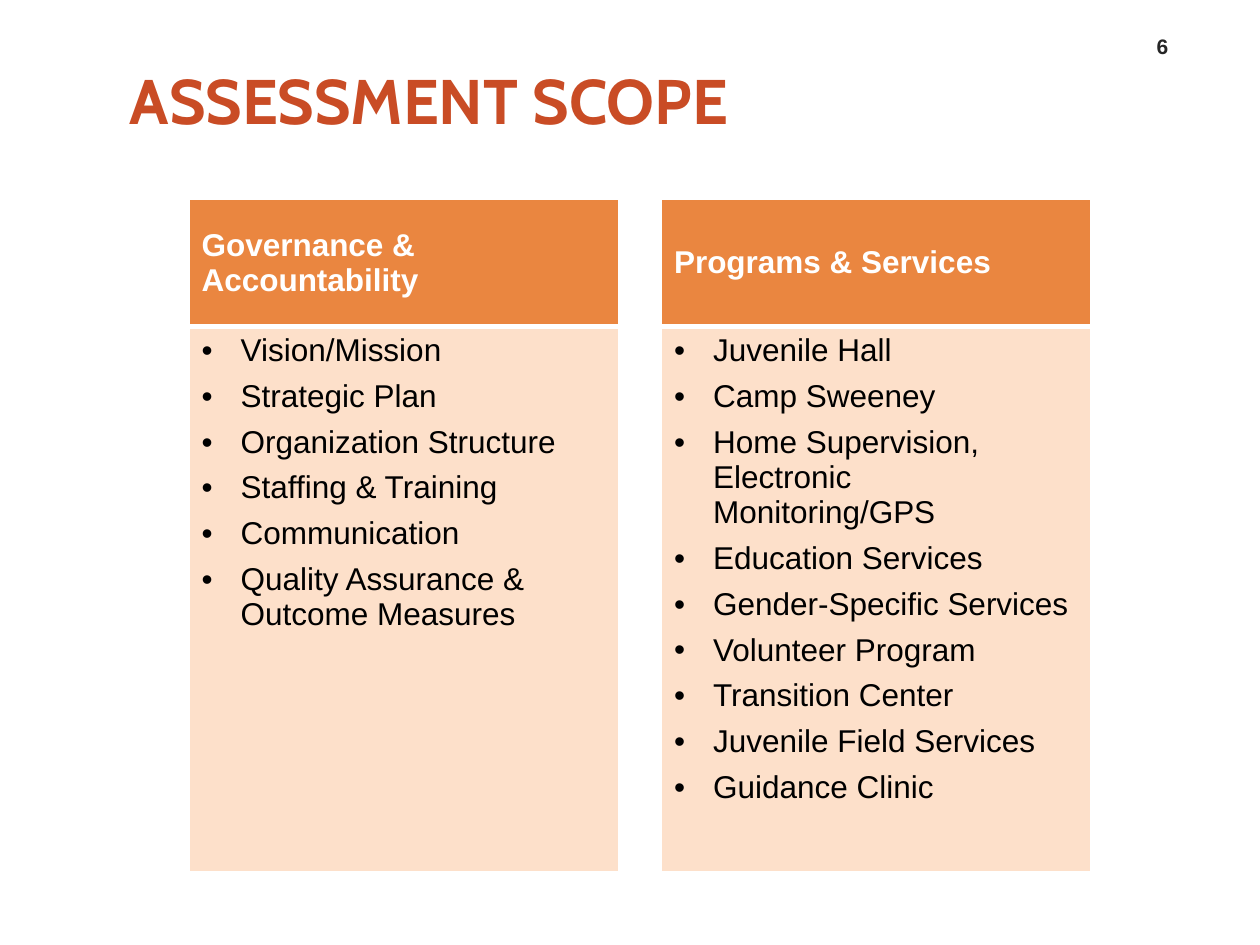
from lxml.etree import SubElement
from pptx import Presentation
from pptx.dml.color import RGBColor
from pptx.enum.text import MSO_ANCHOR as Anchor, PP_ALIGN as Align
from pptx.oxml.ns import qn
from pptx.util import Inches, Pt

WIDTH, HEIGHT = 10, 7.5
COLORS = {
    "title": "C94C25",
    "number": "262626",
    "header": "EA8640",
    "body": "FDE0CA",
    "white": "FFFFFF",
    "black": "000000",
}
SCOPE = {
    "Governance & Accountability": [
        "Vision/Mission",
        "Strategic Plan",
        "Organization Structure",
        "Staffing & Training",
        "Communication",
        "Quality Assurance & Outcome Measures",
    ],
    "Programs & Services": [
        "Juvenile Hall",
        "Camp Sweeney",
        "Home Supervision, Electronic Monitoring/GPS",
        "Education Services",
        "Gender-Specific Services",
        "Volunteer Program",
        "Transition Center",
        "Juvenile Field Services",
        "Guidance Clinic",
    ],
}
COLUMN, GUTTER = 3.41, 0.34
HEADER_ROW, BODY_ROW = 1.01, 4.33
BULLET_INDENT = 0.31


def add_run(paragraph, text, size, color, bold=False, font="Arial"):
    run = paragraph.add_run()
    run.text = text
    run.font.name = font
    run.font.size = Pt(size)
    run.font.bold = bold
    run.font.color.rgb = RGBColor.from_string(COLORS[color])


def add_label(slide, left, top, width, height, anchor):
    label = slide.shapes.add_textbox(
        Inches(WIDTH * left), Inches(HEIGHT * top),
        Inches(WIDTH * width), Inches(HEIGHT * height))
    frame = label.text_frame
    frame.word_wrap = True
    frame.vertical_anchor = anchor
    return frame


def add_title(slide):
    frame = add_label(slide, 0.083, 0.047, 0.55, 0.116, Anchor.MIDDLE)
    frame.margin_left, frame.margin_right = Inches(0.2), 0
    add_run(frame.paragraphs[0], "ASSESSMENT SCOPE", 36, "title", True, "Cabin")


def add_page_number(slide):
    frame = add_label(slide, 0.895, 0.025, 0.055, 0.044, Anchor.BOTTOM)
    frame.paragraphs[0].alignment = Align.CENTER
    add_run(frame.paragraphs[0], "6", 12, "number", True)


def style_cell(cell, fill, bottom_border):
    properties = cell._tc.get_or_add_tcPr()
    for side, points in (("L", 1), ("R", 1), ("T", 1), ("B", bottom_border)):
        border = SubElement(properties, qn(f"a:ln{side}"), w=str(Pt(points)))
        solid = SubElement(border, qn("a:solidFill"))
        SubElement(solid, qn("a:srgbClr"), val=COLORS["white"])
    cell.fill.solid()
    cell.fill.fore_color.rgb = RGBColor.from_string(COLORS[fill])


def add_bullets(frame, items):
    for index, item in enumerate(items):
        paragraph = frame.add_paragraph() if index else frame.paragraphs[0]
        properties = paragraph._p.get_or_add_pPr()
        properties.set("marL", str(Inches(BULLET_INDENT)))
        properties.set("indent", str(-Inches(BULLET_INDENT)))
        SubElement(properties, qn("a:buFont"), typeface="Arial")
        SubElement(properties, qn("a:buChar"), char="•")
        paragraph.space_after = Pt(6)
        add_run(paragraph, item, 18, "black")


def add_scope_table(slide):
    widths, heights = (COLUMN, GUTTER, COLUMN), (HEADER_ROW, BODY_ROW)
    table = slide.shapes.add_table(
        2, 3, Inches(WIDTH * 0.15), Inches(HEIGHT * 0.211),
        Inches(sum(widths)), Inches(sum(heights))).table
    table.horz_banding = False
    for column, width in zip(table.columns, widths):
        column.width = Inches(width)
    for row, height in zip(table.rows, heights):
        row.height = Inches(height)
    for row, (fill, bottom_border) in enumerate((("header", 3), ("body", 1))):
        for column in range(3):
            cell_fill = "white" if column == 1 else fill
            style_cell(table.cell(row, column), cell_fill, bottom_border)
    for column, (heading, items) in zip((0, 2), SCOPE.items()):
        header = table.cell(0, column)
        header.vertical_anchor = Anchor.MIDDLE
        add_run(header.text_frame.paragraphs[0], heading, 18, "white", True)
        add_bullets(table.cell(1, column).text_frame, items)


def main():
    deck = Presentation()
    deck.slide_width, deck.slide_height = Inches(WIDTH), Inches(HEIGHT)
    slide = deck.slides.add_slide(deck.slide_layouts[6])
    add_title(slide)
    add_page_number(slide)
    add_scope_table(slide)
    deck.save("out.pptx")


if __name__ == "__main__":
    main()
